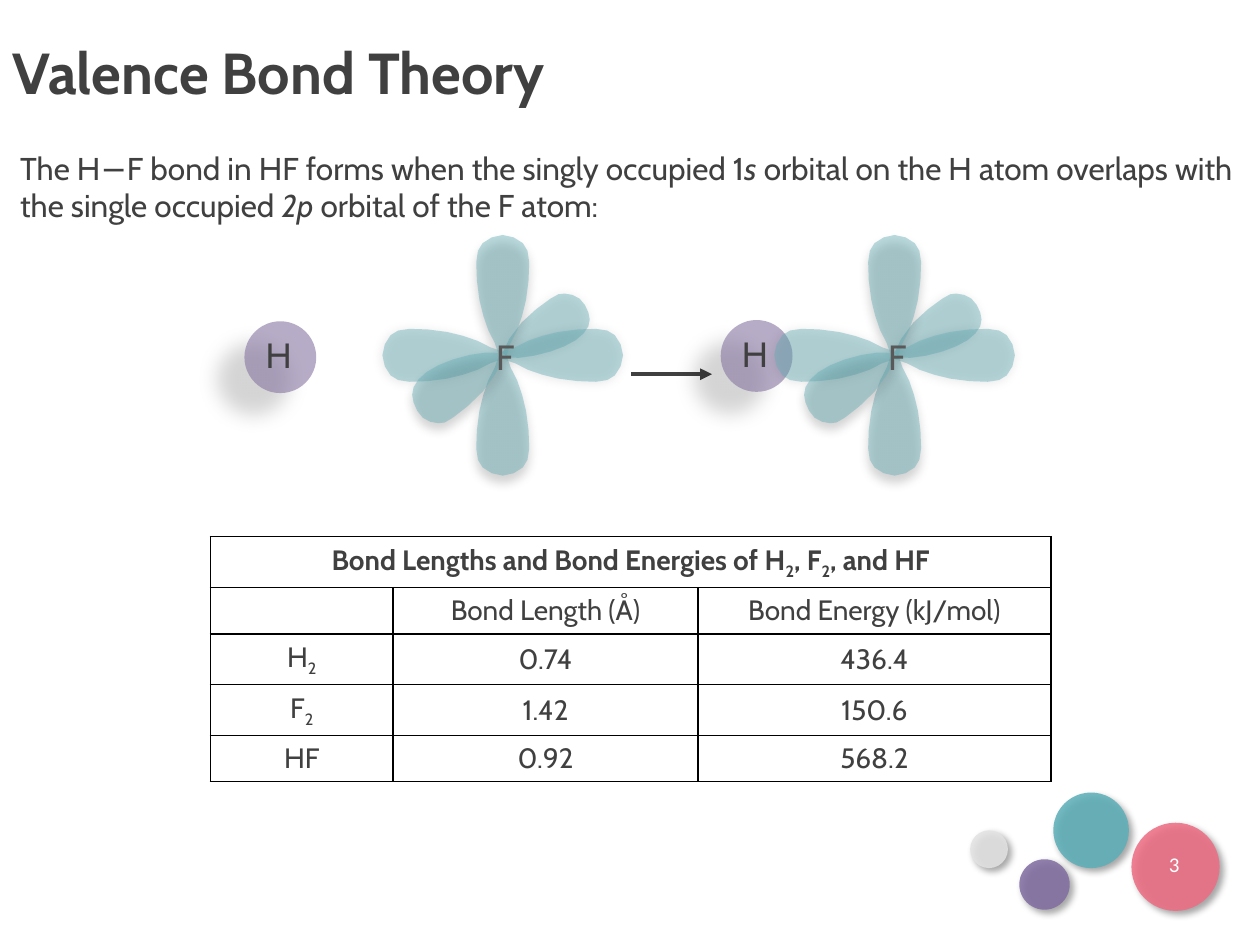
from lxml.etree import SubElement
from pptx import Presentation
from pptx.dml.color import RGBColor
from pptx.enum.shapes import MSO_CONNECTOR, MSO_SHAPE
from pptx.enum.text import MSO_ANCHOR, PP_ALIGN
from pptx.oxml.ns import qn
from pptx.util import Inches, Pt

COLS, ROWS = 100, 75  # grid over the slide
CELL = Inches(10) // COLS
INK = {"text": "404040", "label": "595959", "white": "FFFFFF", "black": "000000",
       "lobe": "67AEB6", "sphere": "8776A2", "grey": "E3E3E3", "violet": "816DA1",
       "teal": "5CAFB8", "pink": "EE6C82"}

# Outlines in cells from the nucleus
SIDE = [(0.3, 0), (1.15, 2), (1.85, 4.4), (2.1, 7.4), (1.6, 8.9)]
HALF = [(x, -y) for x, y in SIDE[:0:-1]] + SIDE
TALL = HALF + [(0, 9.55)] + [(-x, y) for x, y in HALF[::-1]] + [(0, -9.55)]
WIDE = [(y, x) for x, y in TALL]
BACK = [(0, -0.2), (1.5, -2.6), (3.8, -4.5), (4.9, -4.9), (6.1, -4.5), (6.8, -3.4),
        (6.8, -2.3), (5.8, -1.2), (3.8, -0.3), (1.3, 0.2)]
FRONT = [(-1.04 * x, -1.1 * y) for x, y in BACK]


def grid(*cells):
    return [round(n * CELL) for n in cells]


def rgb(name):
    return RGBColor.from_string(INK[name])


def text(frame, parts, size=16, color="text", font="Cabin", bold=False, align=None):
    """Write (words, style) parts as one paragraph; style is "", "i" or "sub"."""
    para = frame.paragraphs[0]
    para.alignment = align
    for words, style in parts:
        run = para.add_run()
        run.text = words
        face = run.font
        face.size, face.name, face.bold = Pt(size), font, bold
        face.italic = style == "i"
        face.color.rgb = rgb(color)
        if style == "sub":
            run._r.get_or_add_rPr().set("baseline", "-25000")
    return para


def label(slide, box, words, **form):
    frame = slide.shapes.add_textbox(*grid(*box)).text_frame
    frame.word_wrap = True
    text(frame, [(words, "")], **form)
    return frame


def paint(shape, color, alpha, shade):
    """Fill with a see-through colour; shade is opacity, blur, distance, angle."""
    shape.fill.solid()
    shape.fill.fore_color.rgb = rgb(color)
    shape.line.fill.background()
    tone = shape._element.spPr.find(qn("a:solidFill"))[0]
    SubElement(tone, qn("a:alpha"), val=str(alpha * 1000))
    shape.shadow.inherit = False
    part = shape._element.spPr.find(qn("a:effectLst"))
    dim, blur, dist, angle = shade
    drop = SubElement(part, qn("a:outerShdw"), blurRad=str(Pt(blur)), dist=str(Pt(dist)),
                      dir=str(angle * 60000), algn="ctr", rotWithShape="0")
    hue = SubElement(drop, qn("a:srgbClr"), val=INK["black"])
    SubElement(hue, qn("a:alpha"), val=str(dim * 1000))


def disc(slide, box, color, alpha, shade):
    paint(slide.shapes.add_shape(MSO_SHAPE.OVAL, *grid(*box)), color, alpha, shade)


def smooth(points, steps=2):
    """Closed Catmull-Rom curve through the points."""
    curve = []
    for i in range(len(points)):
        quad = [points[(i + k) % len(points)] for k in (-1, 0, 1, 2)]
        for t in (n / steps for n in range(steps)):
            curve.append([(2 * b + (c - a) * t + (2 * a - 5 * b + 4 * c - d) * t ** 2
                           + (3 * b - a - 3 * c + d) * t ** 3) / 2
                          for a, b, c, d in zip(*quad)])
    return curve


def lobe(slide, x, y, points, shade):
    curve = [grid(x + dx, y + dy) for dx, dy in smooth(points)]
    pen = slide.shapes.build_freeform(*curve[0])
    pen.add_line_segments(curve[1:], close=True)
    paint(pen.convert_to_shape(), "lobe", 45, shade)


def atoms(slide, left, top, core):
    """One hydrogen sphere and the fluorine p orbitals around core."""
    x, y = core
    disc(slide, (left, top, 5.7, 5.7), "sphere", 60, (28, 11.8, 19.7, 141))
    soft, deep = (20, 6, 1, 135), (39, 6, 4, 90)
    for points, shade in ((BACK, soft), (TALL, deep), (WIDE, soft), (FRONT, deep)):
        lobe(slide, x, y, points, shade)
    label(slide, (x - 1.5, y - 2.1, 2.6, 4.1), "F", size=20, color="label")
    label(slide, (left + 0.7, top + 0.5, 3.3, 4.4), "H", size=20)


def arrow(slide, x, y, width):
    line = slide.shapes.add_connector(MSO_CONNECTOR.STRAIGHT, *grid(x, y, x + width, y))
    line.line.color.rgb = rgb("text")
    line.line.width = Pt(2.25)
    SubElement(line._element.spPr.find(qn("a:ln")), qn("a:tailEnd"), type="triangle")
    SubElement(line._element.spPr, qn("a:effectLst"))


def border(cell):
    props = cell._tc.get_or_add_tcPr()
    for i, side in enumerate(("lnL", "lnR", "lnT", "lnB")):
        edge = props.makeelement(qn("a:" + side), {"w": str(Pt(1))})
        SubElement(SubElement(edge, qn("a:solidFill")), qn("a:srgbClr"), val=INK["black"])
        props.insert(i, edge)


def bonds(slide, x, y, widths, height):
    """Table of bond lengths and energies."""
    rows = [
        [[("Bond Lengths and Bond Energies of H", ""), ("2", "sub"), (", F", ""),
          ("2", "sub"), (", and HF", "")], [], []],
        [[], [("Bond Length (Å)", "")], [("Bond Energy (kJ/mol)", "")]],
        [[("H", ""), ("2", "sub")], [("0.74", "")], [("436.4", "")]],
        [[("F", ""), ("2", "sub")], [("1.42", "")], [("150.6", "")]],
        [[("HF", "")], [("0.92", "")], [("568.2", "")]],
    ]
    box = grid(x, y, sum(widths), height * len(rows))
    table = slide.shapes.add_table(len(rows), len(widths), *box).table
    for col, width in zip(table.columns, grid(*widths)):
        col.width = width
    table.cell(0, 0).merge(table.cell(0, 2))
    for r, row in enumerate(rows):
        for c, parts in enumerate(row):
            cell = table.cell(r, c)
            cell.fill.solid()
            cell.fill.fore_color.rgb = rgb("white")
            cell.vertical_anchor = MSO_ANCHOR.MIDDLE
            border(cell)
            para = text(cell.text_frame, parts, bold=r == 0, align=PP_ALIGN.CENTER)
            if not parts:
                SubElement(para._p, qn("a:endParaRPr"), sz="1600")


def place(shape, box, anchor):
    shape.left, shape.top, shape.width, shape.height = grid(*box)
    shape.text_frame.vertical_anchor = anchor
    return shape.text_frame


def heading(slide):
    """Title and opening sentence."""
    title, body = slide.placeholders
    frame = place(title, (0, 3, COLS, 6), MSO_ANCHOR.MIDDLE)
    para = text(frame, [("Valence Bond Theory", "")], size=33, bold=True, align=PP_ALIGN.LEFT)
    para.line_spacing = 0.9
    frame = place(body, (0.6, 11.3, COLS - 0.6, 7.1), MSO_ANCHOR.TOP)
    props = frame.paragraphs[0]._p.get_or_add_pPr()
    props.set("marL", "0")
    props.set("indent", "0")
    SubElement(props, qn("a:buNone"))
    para = text(frame, [("The H−F bond in HF forms when the singly occupied 1", ""), ("s", "i"),
                        (" orbital on the H atom overlaps with the single occupied ", ""),
                        ("2p ", "i"), ("orbital of the F atom:", "")], size=18)
    para.space_before = Pt(0)


def bubbles(slide):
    """Corner discs with the slide number."""
    for x, y, size, color in ((77, 65.9, 3, "grey"), (80.9, 68.2, 4, "violet"),
                              (83.6, 62.9, 6, "teal"), (89.8, 65.3, 7, "pink")):
        disc(slide, (x, y, size, size), color, 86, (40, 4, 3, 45))
    frame = label(slide, (91.5, 66.6, 3.4, 4), "3", size=12, color="white",
                  font="Calibri", align=PP_ALIGN.CENTER)
    frame.vertical_anchor = MSO_ANCHOR.MIDDLE


def main():
    deck = Presentation()
    deck.slide_width, deck.slide_height = grid(COLS, ROWS)
    slide = deck.slides.add_slide(deck.slide_layouts[1])
    bubbles(slide)
    heading(slide)
    bonds(slide, 16.7, 42.6, (14.5, 24.2, 28), 3)
    atoms(slide, 19.4, 25.5, (39.9, 28.2))
    arrow(slide, 50.1, 29.7, 6.4)
    atoms(slide, 57.2, 25.4, (71, 28.2))
    deck.save("out.pptx")


if __name__ == "__main__":
    main()
